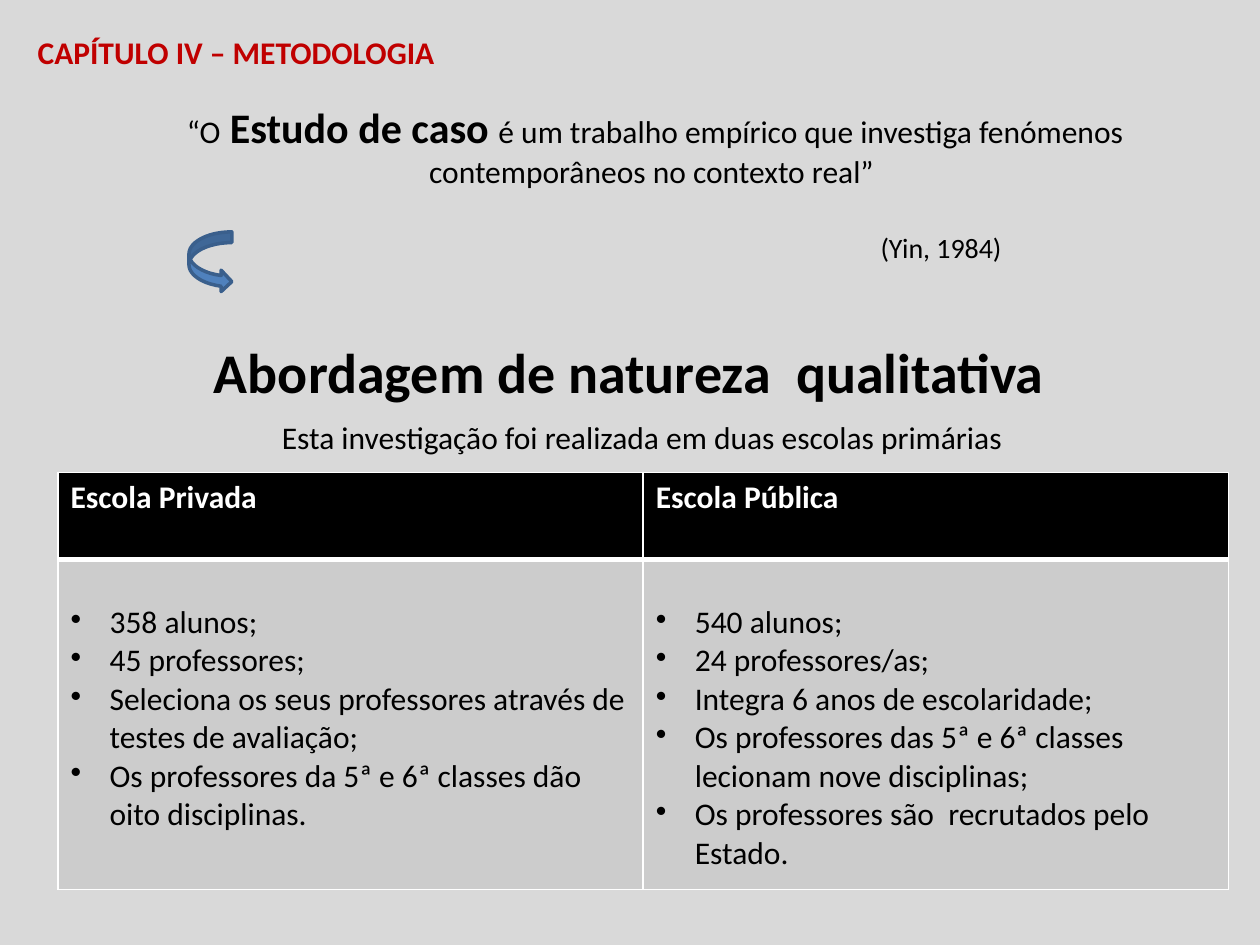
"""Build the methodology slide comparing the two schools of the case study."""
from dataclasses import dataclass

import pptx
import pptx.dml.color
import pptx.enum.shapes
import pptx.enum.text
import pptx.oxml
import pptx.oxml.ns
import pptx.util
from pptx.util import Inches

CENTER = pptx.enum.text.PP_ALIGN.CENTER


@dataclass(frozen=True)
class Theme:
    """Colours, font and type sizes of the slide."""
    font: str = "Calibri"
    background: str = "D9D9D9"
    title: str = "C00000"
    ink: str = "000000"
    paper: str = "FFFFFF"
    body_fill: str = "CCCCCC"
    arrow: str = "4F81BD"
    arrow_line: str = "3A5F8C"
    citation: int = 16
    body: int = 18
    emphasis: int = 24
    headline: int = 32


class SlideBuilder:
    """Add styled elements to one slide."""

    def __init__(self, slide, theme):
        self.slide = slide
        self.theme = theme
        self.paint(slide.background.fill, theme.background)

    def paint(self, fill, color):
        """Make a fill solid."""
        fill.solid()
        fill.fore_color.rgb = pptx.dml.color.RGBColor.from_string(color)

    def style(self, font, size, color, bold=False):
        """Set the typeface, size, colour and weight of a font."""
        font.name = self.theme.font
        font.size = pptx.util.Pt(size)
        font.bold = bold
        font.color.rgb = pptx.dml.color.RGBColor.from_string(color)

    def text(self, box, runs, color, align=None, wrap=True):
        """Add a text box from (text, size, bold) runs."""
        shape = self.slide.shapes.add_textbox(*map(Inches, box))
        frame = shape.text_frame
        frame.word_wrap = wrap
        frame.auto_size = pptx.enum.text.MSO_AUTO_SIZE.SHAPE_TO_FIT_TEXT
        paragraph = frame.paragraphs[0]
        paragraph.alignment = align
        if len(runs) == 1:
            content, size, bold = runs[0]
            paragraph.add_run().text = content
            self.style(paragraph.font, size, color, bold)
            return
        for content, size, bold in runs:
            run = paragraph.add_run()
            run.text = content
            self.style(run.font, size, color, bold)

    def curved_arrow(self, box):
        """Add the curved arrow that leads to the approach."""
        kind = pptx.enum.shapes.MSO_SHAPE.CURVED_RIGHT_ARROW
        shape = self.slide.shapes.add_shape(kind, *map(Inches, box))
        shape.shadow.inherit = False
        self.paint(shape.fill, self.theme.arrow)
        self.paint(shape.line.fill, self.theme.arrow_line)
        shape.line.width = pptx.util.Pt(2)

    def borders(self, cell, **widths):
        """Draw cell borders with widths in points."""
        properties = cell._tc.get_or_add_tcPr()
        namespace = pptx.oxml.ns.nsdecls("a")
        for side in "LRTB":
            width = pptx.util.Pt(widths.get(side, 1))
            properties.append(pptx.oxml.parse_xml(
                f'<a:ln{side} {namespace} w="{width}"><a:solidFill>'
                f'<a:srgbClr val="{self.theme.paper}"/></a:solidFill></a:ln{side}>'))

    def bullet(self, paragraph):
        """Give a paragraph a hanging bullet."""
        properties = paragraph._p.get_or_add_pPr()
        properties.set("marL", str(Inches(0.31)))
        properties.set("indent", str(-Inches(0.31)))
        mark = pptx.oxml.parse_xml(f'<a:buChar {pptx.oxml.ns.nsdecls("a")} char="•"/>')
        properties.insert(0, mark)

    def table(self, box, row_heights, columns):
        """Add a table with one heading and one bulleted list per column."""
        theme = self.theme
        frame = self.slide.shapes.add_table(2, len(columns), *map(Inches, box))
        table = frame.table
        for row, height in zip(table.rows, row_heights):
            row.height = Inches(height)
        for index, (heading, items) in enumerate(columns.items()):
            header, body = table.cell(0, index), table.cell(1, index)
            self.borders(header, B=3)
            self.paint(header.fill, theme.ink)
            header.text = heading
            self.style(header.text_frame.paragraphs[0].font, theme.body, theme.paper, True)
            self.borders(body, T=3)
            self.paint(body.fill, theme.body_fill)
            body.margin_top = Inches(0.35)
            body.text = "\n".join(items)
            for paragraph in body.text_frame.paragraphs:
                self.style(paragraph.font, theme.body, theme.ink)
                self.bullet(paragraph)


def main():
    """Build and save the presentation."""
    presentation = pptx.Presentation()
    presentation.slide_width, presentation.slide_height = Inches(10), Inches(7.5)
    slide = presentation.slides.add_slide(presentation.slide_layouts[6])
    theme = Theme()
    builder = SlideBuilder(slide, theme)

    builder.text((0.2, 0.21, 3.38, 0.4),
                 [("CAPÍTULO IV – METODOLOGIA", theme.body, True)], theme.title, wrap=False)
    builder.text((0.67, 0.76, 9.06, 0.81), [
        ("“O", theme.body, False),
        (" Estudo de caso ", theme.emphasis, True),
        ("é um trabalho empírico que investiga fenómenos contemporâneos no contexto real” ",
         theme.body, False),
    ], theme.ink, CENTER)
    builder.text((6.89, 1.78, 1.17, 0.37),
                 [("(Yin, 1984)", theme.citation, False)], theme.ink, wrap=False)
    builder.text((1.6, 2.63, 7.2, 0.64),
                 [("Abordagem de natureza  qualitativa", theme.headline, True)], theme.ink)
    builder.curved_arrow((1.5, 1.84, 0.34, 0.48))
    builder.table((0.46, 3.75, 9.29, 3.31), (0.69, 2.62), {
        "Escola Privada": (
            "358 alunos;",
            "45 professores;",
            "Seleciona os seus professores através de testes de avaliação;",
            "Os professores da 5ª e 6ª classes dão oito disciplinas.",
        ),
        "Escola Pública": (
            "540 alunos;",
            "24 professores/as;",
            "Integra 6 anos de escolaridade;",
            "Os professores das 5ª e 6ª classes lecionam nove disciplinas;",
            "Os professores são  recrutados pelo Estado.",
        ),
    })
    builder.text((0.45, 3.27, 9.29, 0.4),
                 [("Esta investigação foi realizada em duas escolas primárias", theme.body, False)],
                 theme.ink, CENTER)
    presentation.save("out.pptx")


if __name__ == "__main__":
    main()
